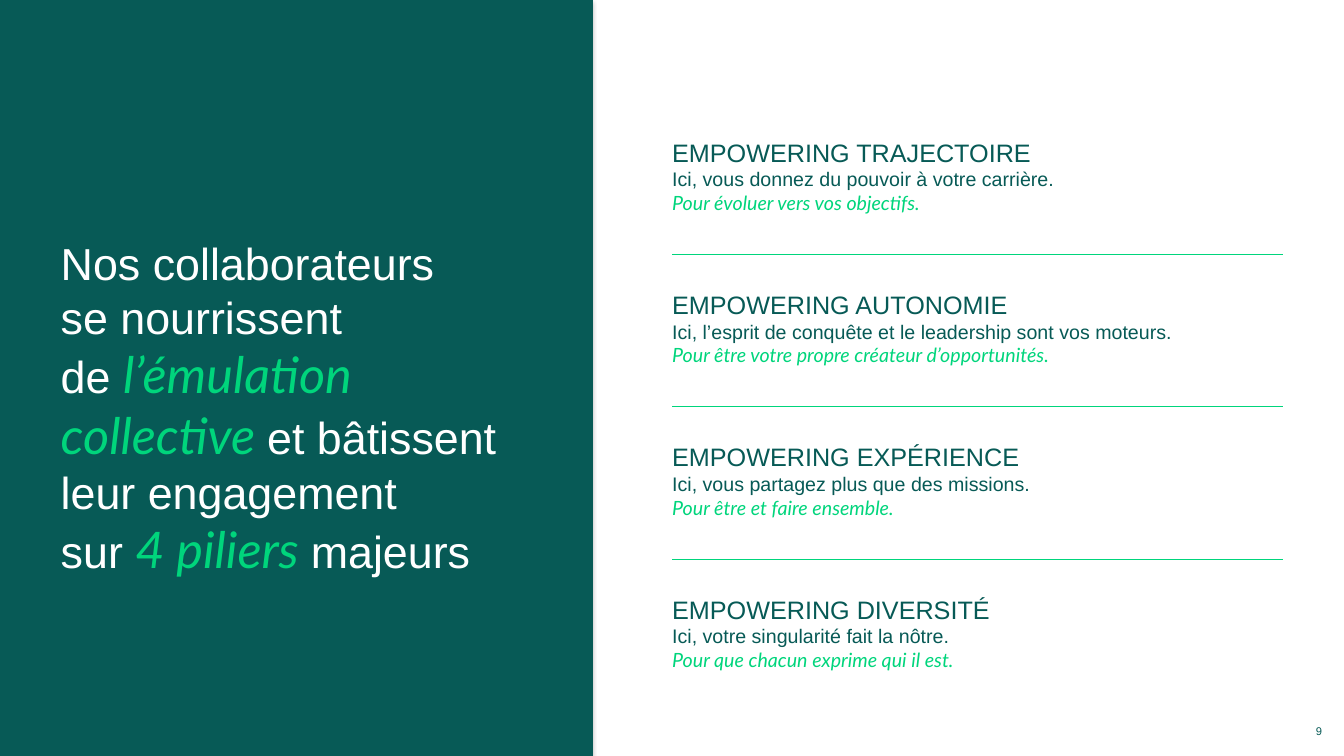
import pptx
import pptx.util
import pptx.dml.color
import pptx.enum.shapes
import pptx.enum.text
import pptx.oxml
import pptx.oxml.ns
from lxml import etree

Cm, Pt = pptx.util.Cm, pptx.util.Pt
RGB = pptx.dml.color.RGBColor
TEAL = RGB(0x07, 0x5A, 0x56)
GREEN = RGB(0x00, 0xD5, 0x7C)
WHITE = RGB(0xFF, 0xFF, 0xFF)
SANS, LATO = "Arial", "Lato"
SHADE = (
    '<a:effectLst %s><a:outerShdw blurRad="38100" dist="22860" dir="5400000" rotWithShape="0">'
    '<a:srgbClr val="000000"><a:alpha val="35000"/></a:srgbClr></a:outerShdw></a:effectLst>'
    % pptx.oxml.ns.nsdecls("a")
)

HEAD = [
    ("Nos collaborateurs\nse nourrissent\nde\u00a0".replace("\u00a0", " "), False),
    ("l’émulation \ncollective ", True),
    ("et bâtissent\nleur engagement\nsur ", False),
    ("4 piliers ", True),
    ("majeurs", False),
]
PILLARS = [
    ("EMPOWERING TRAJECTOIRE", "Ici, vous donnez du pouvoir à votre carrière.",
     "Pour évoluer vers vos objectifs."),
    ("EMPOWERING AUTONOMIE", "Ici, l’esprit de conquête et le leadership sont vos moteurs.",
     "Pour être votre propre créateur d’opportunités."),
    ("EMPOWERING EXPÉRIENCE", "Ici, vous partagez plus que des missions.",
     "Pour être et faire ensemble."),
    ("EMPOWERING DIVERSITÉ", "Ici, votre singularité fait la nôtre.",
     "Pour que chacun exprime qui il est."),
]
PAGE = "9"

LEFT, WIDTH = 16.94, 15.4
TOP, PITCH, RULE = 3.45, 3.84, 6.4


def write(para, text, size=14, color=TEAL, font=SANS, italic=False):
    for i, part in enumerate(text.split("\n")):
        if i:
            para.add_line_break()
        run = para.add_run()
        run.text = part
        run.font.size = Pt(size)
        run.font.name = font
        run.font.italic = italic
        run.font.color.rgb = color


def setup(shape, left, top, width, height, wrap=True):
    shape.left, shape.top = Cm(left), Cm(top)
    shape.width, shape.height = Cm(width), Cm(height)
    frame = shape.text_frame
    frame.margin_left = frame.margin_right = 0
    frame.margin_top = frame.margin_bottom = 0
    frame.word_wrap = wrap
    frame.auto_size = pptx.enum.text.MSO_AUTO_SIZE.NONE
    frame.vertical_anchor = pptx.enum.text.MSO_ANCHOR.TOP
    return frame


def add_box(slide, *place, wrap=True):
    return setup(slide.shapes.add_textbox(0, 0, 0, 0), *place, wrap=wrap)


def add_panel(slide):
    panel = slide.shapes.add_shape(
        pptx.enum.shapes.MSO_SHAPE.RECTANGLE, 0, 0, Cm(14.94), Cm(19.05))
    panel.fill.solid()
    panel.fill.fore_color.rgb = TEAL
    panel.line.fill.background()
    panel.element.spPr.append(pptx.oxml.parse_xml(SHADE))
    slide.shapes.title.element.addprevious(panel.element)


def add_head(slide):
    para = setup(slide.shapes.title, 1.53, 5.94, 12.78, 10.5).paragraphs[0]
    para.alignment = pptx.enum.text.PP_ALIGN.LEFT
    for text, accent in HEAD:
        if accent:
            write(para, text, size=36, color=GREEN, font=LATO, italic=True)
        else:
            write(para, text, size=32, color=WHITE)
    qn = pptx.oxml.ns.qn
    for gap in slide.shapes.title.element.iter(qn("a:br")):
        props = etree.SubElement(gap, qn("a:rPr"), sz="3200")
        etree.SubElement(props, qn("a:latin"), typeface=LATO)


def add_rule(slide, top):
    rule = slide.shapes.add_connector(
        pptx.enum.shapes.MSO_CONNECTOR.STRAIGHT, Cm(LEFT), Cm(top), Cm(LEFT + WIDTH), Cm(top))
    rule.line.color.rgb = GREEN
    rule.line.width = Pt(0.25)
    etree.SubElement(rule.element.spPr, pptx.oxml.ns.qn("a:effectLst"))


def add_pillar(slide, top, name, claim, goal):
    frame = add_box(slide, LEFT, top, WIDTH, 2.05)
    write(frame.paragraphs[0], name, size=18)
    write(frame.add_paragraph(), claim)
    write(frame.add_paragraph(), goal, color=GREEN, font=LATO, italic=True)


def main():
    deck = pptx.Presentation()
    deck.slide_width, deck.slide_height = Cm(33.87), Cm(19.05)
    slide = deck.slides.add_slide(deck.slide_layouts[5])
    add_panel(slide)
    add_head(slide)
    for i, pillar in enumerate(PILLARS):
        add_pillar(slide, TOP + i * PITCH, *pillar)
        if i < len(PILLARS) - 1:
            add_rule(slide, RULE + i * PITCH)
    page = add_box(slide, 32.84, 18.26, 0.48, 0.33, wrap=False).paragraphs[0]
    page.alignment = pptx.enum.text.PP_ALIGN.RIGHT
    write(page, PAGE, size=8)
    deck.save("out.pptx")


if __name__ == "__main__":
    main()
